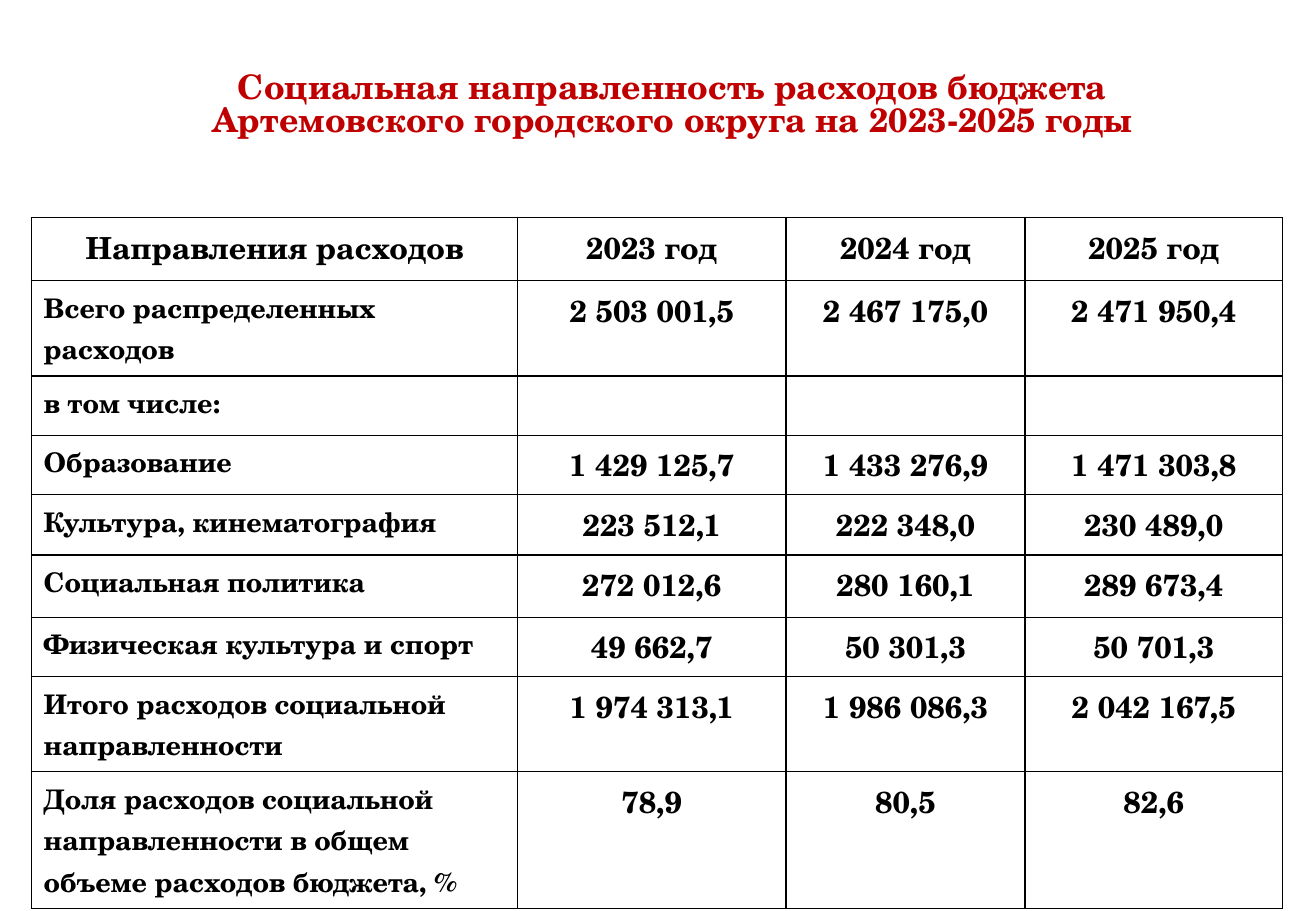
from lxml.etree import SubElement
from pptx import Presentation
from pptx.dml.color import RGBColor
from pptx.enum.text import MSO_ANCHOR as Anchor, MSO_AUTO_SIZE as AutoSize, PP_ALIGN as Align
from pptx.oxml.ns import qn
from pptx.util import Cm, Pt

HEADINGS = ["Направления расходов", "2023 год", "2024 год", "2025 год"]
EXPENSES = [
    ["Всего распределенных расходов", "2 503 001,5", "2 467 175,0", "2 471 950,4"],
    ["в том числе:", "", "", ""],
    ["Образование", "1 429 125,7", "1 433 276,9", "1 471 303,8"],
    ["Культура, кинематография", "223 512,1", "222 348,0", "230 489,0"],
    ["Социальная политика", "272 012,6", "280 160,1", "289 673,4"],
    ["Физическая культура и спорт", "49 662,7", "50 301,3", "50 701,3"],
    ["Итого расходов социальной направленности", "1 974 313,1", "1 986 086,3", "2 042 167,5"],
    ["Доля расходов социальной направленности в общем объеме расходов бюджета, %",
     "78,9", "80,5", "82,6"],
]
COLUMN_WIDTHS = [10.16, 5.61, 5, 5.38]
ROW_HEIGHTS = [1.32, 1.27, 1.24, 1.09, 1.27, 1.3, 1.17, 1.75, 2.64]


def color(value):
    return RGBColor.from_string(value)


def apply(target, values):
    for name, value in values.items():
        setattr(target, name, value)


class BudgetSlide:
    font = "TeX Gyre Schola"
    ink = "000000"
    accent = "C00000"

    def __init__(self, deck):
        self.page = deck.slides.add_slide(deck.slide_layouts[6])

    def add_text(self, frame, text, size, ink, align):
        para = frame.paragraphs[0]
        para.alignment = align
        span = para.add_run()
        span.text = text
        apply(span.font, {"name": self.font, "size": Pt(size), "bold": True})
        span.font.color.rgb = color(ink)
        return para

    def title(self, text, left, top, width, height):
        box = self.page.shapes.add_textbox(Cm(left), Cm(top), Cm(width), Cm(height))
        frame = box.text_frame
        apply(frame, {"word_wrap": True, "auto_size": AutoSize.SHAPE_TO_FIT_TEXT,
                      "vertical_anchor": Anchor.MIDDLE})
        para = self.add_text(frame, text, 20, self.accent, Align.CENTER)
        para.line_spacing = 0.8

    def border(self, cell):
        properties = cell._tc.get_or_add_tcPr()
        for side in ("lnL", "lnR", "lnT", "lnB"):
            line = SubElement(properties, qn(f"a:{side}"), w=str(Pt(1)))
            fill = SubElement(line, qn("a:solidFill"))
            SubElement(fill, qn("a:srgbClr"), val=self.ink)

    def table(self, rows, left, top, widths, heights):
        table = self.page.shapes.add_table(
            len(rows), len(widths), Cm(left), Cm(top), Cm(sum(widths)), Cm(sum(heights))
        ).table
        apply(table, {"first_row": False, "horz_banding": False})
        for column, width in zip(table.columns, widths):
            column.width = Cm(width)
        for row, height in zip(table.rows, heights):
            row.height = Cm(height)
        for row_index, texts in enumerate(rows):
            for column_index, text in enumerate(texts):
                cell = table.cell(row_index, column_index)
                self.border(cell)
                cell.fill.background()
                is_label = row_index > 0 and column_index == 0
                size, align = (16, Align.LEFT) if is_label else (18, Align.CENTER)
                if text:
                    self.add_text(cell.text_frame, text, size, self.ink, align)


def main():
    deck = Presentation()
    apply(deck, {"slide_width": Cm(27.51), "slide_height": Cm(19.05)})
    slide = BudgetSlide(deck)
    slide.table([HEADINGS] + EXPENSES, 0.66, 4.55, COLUMN_WIDTHS, ROW_HEIGHTS)
    slide.title("Социальная направленность расходов бюджета "
                "Артемовского городского округа на 2023-2025 годы", 2.11, 1.24, 23.9, 1.96)
    deck.save("out.pptx")


if __name__ == "__main__":
    main()
